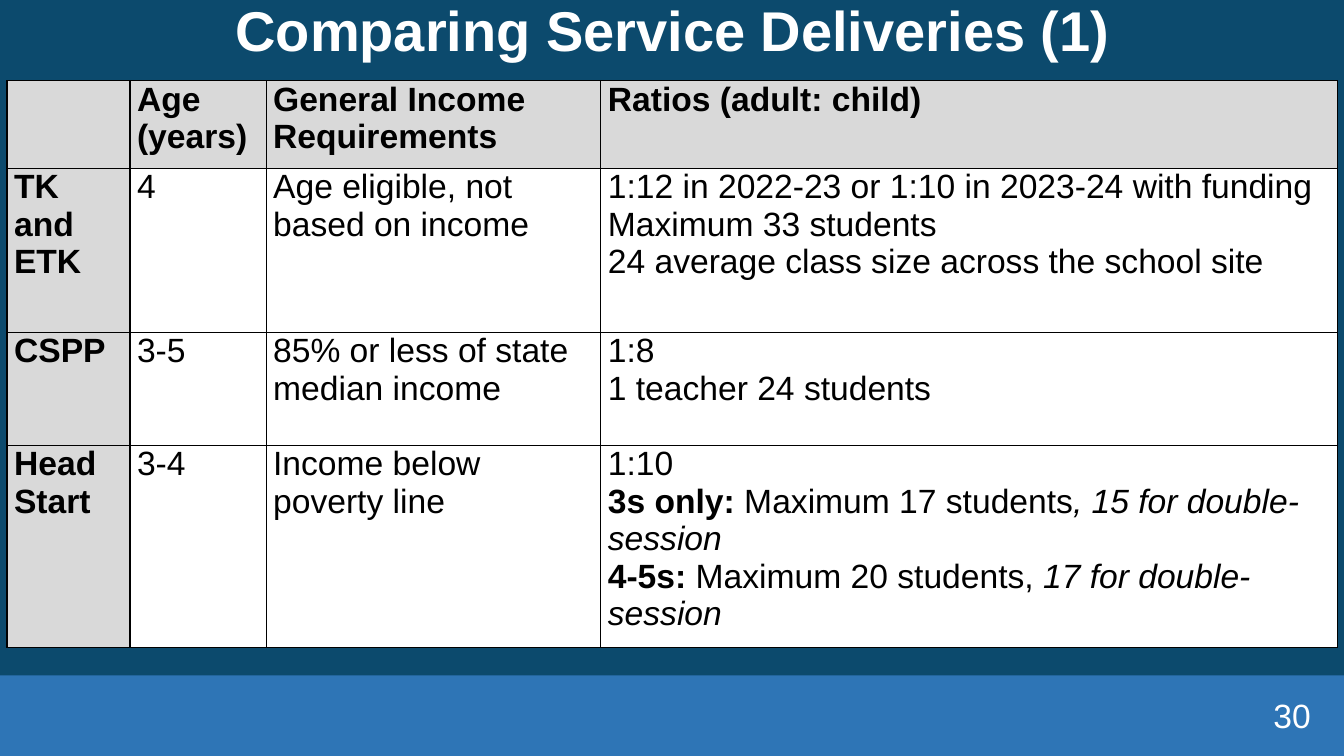
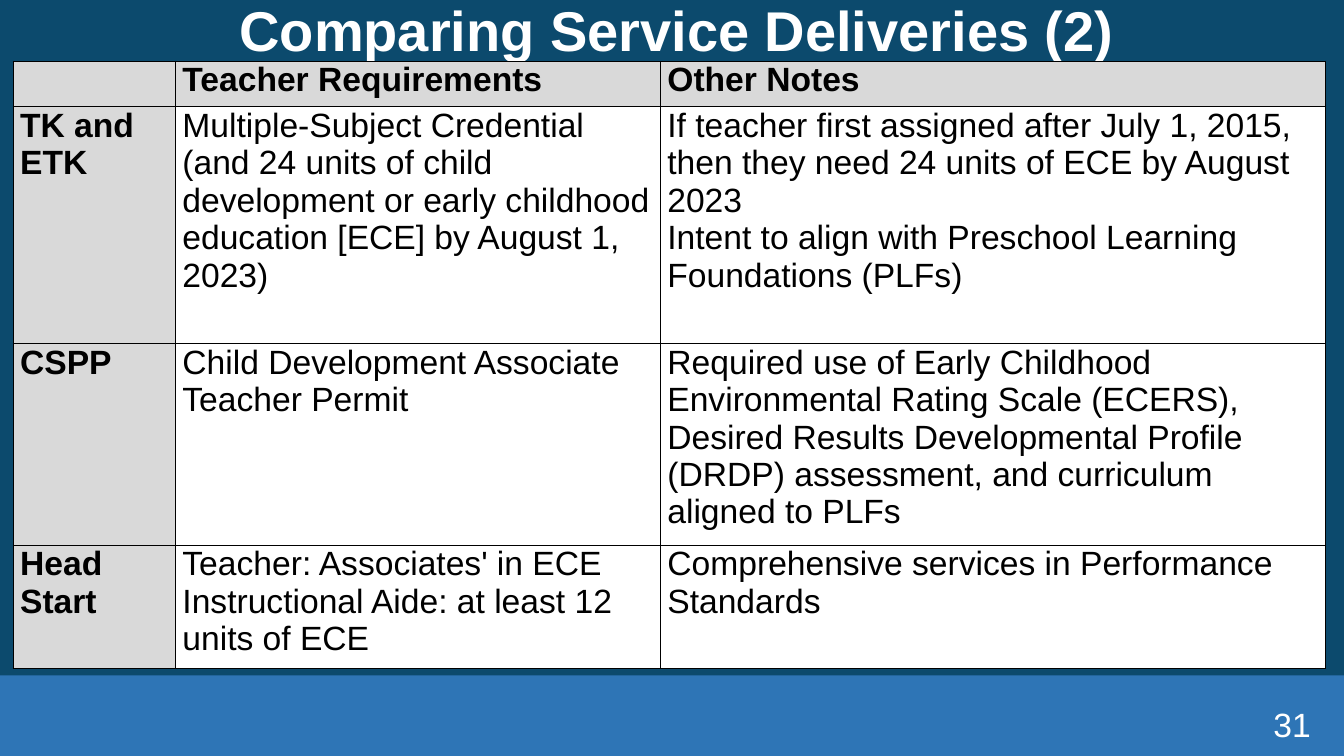
import pptx
import pptx.util
import pptx.dml.color
import pptx.enum.shapes
import pptx.enum.text
import pptx.oxml

PX = 9144
PAGE_WIDTH, PAGE_HEIGHT = 1333, 750
FONT = "Arial"
COLORS = {
    "page": "0C4A6D",
    "band": "2E75B6",
    "light": "FFFFFF",
    "header": "D9D9D9",
    "ink": "000000",
}
ALIGN = pptx.enum.text.PP_ALIGN
ANCHOR = pptx.enum.text.MSO_ANCHOR
BOLD, ITALIC = "bold", "italic"

SLIDES = [
    {
        "title": "Comparing Service Deliveries (1)",
        "title_box": (17, -29, 1300, 124),
        "number": "30",
        "number_box": (1132, 675, 168, 54),
        "table_at": (7, 80),
        "columns": [122, 135, 332, 731],
        "heights": [87, 163, 112, 186],
        "rows": [
            ["", "Age (years)", "General Income Requirements", "Ratios (adult: child)"],
            ["TK and ETK", "4", "Age eligible, not based on income", [
                "1:12 in 2022-23 or 1:10 in 2023-24 with funding",
                "Maximum 33 students",
                "24 average class size across the school site",
            ]],
            ["CSPP", "3-5", "85% or less of state median income", ["1:8", "1 teacher 24 students"]],
            ["Head Start", "3-4", "Income below poverty line", [
                "1:10",
                [("3s only: ", BOLD), ("Maximum 17 students", None), (", 15 for double-session", ITALIC)],
                [("4-5s: ", BOLD), ("Maximum 20 students, ", None), ("17 for double-session", ITALIC)],
            ]],
        ],
    },
    {
        "title": "Comparing Service Deliveries (2)",
        "title_box": (21, -29, 1300, 125),
        "number": "31",
        "number_box": (1151, 691, 149, 47),
        "table_at": (13, 61),
        "columns": [161, 481, 660],
        "heights": [45, 235, 187, 122],
        "rows": [
            ["", "Teacher Requirements", "Other Notes"],
            ["TK and ETK",
             "Multiple-Subject Credential (and 24 units of child development or early "
             "childhood education [ECE] by August 1, 2023)",
             ["If teacher first assigned after July 1, 2015, then they need 24 units of ECE by August 2023",
              "Intent to align with Preschool Learning Foundations (PLFs)"]],
            ["CSPP", "Child Development Associate Teacher Permit",
             "Required use of Early Childhood Environmental Rating Scale (ECERS), "
             "Desired Results Developmental Profile (DRDP) assessment, and curriculum aligned to PLFs"],
            ["Head Start",
             ["Teacher: Associates' in ECE", "Instructional Aide: at least 12 units of ECE"],
             "Comprehensive services in Performance Standards"],
        ],
    },
]


def px(*lengths):
    """Turn px lengths into EMU."""
    return [pptx.util.Emu(length * PX) for length in lengths]


def paint(fill, name):
    """Give a fill one solid named colour."""
    fill.solid()
    fill.fore_color.rgb = pptx.dml.color.RGBColor.from_string(COLORS[name])


def style_span(span, size, color, bold=False, italic=False):
    """Set the font of one run."""
    span.font.name = FONT
    span.font.size = pptx.util.Pt(size)
    span.font.bold = bold
    span.font.italic = italic
    span.font.color.rgb = pptx.dml.color.RGBColor.from_string(COLORS[color])


def add_band(page):
    """Draw the band along the foot of the page."""
    band = page.shapes.add_shape(
        pptx.enum.shapes.MSO_SHAPE.RECTANGLE, *px(0, PAGE_HEIGHT - 80, PAGE_WIDTH, 80))
    band.shadow.inherit = False
    paint(band.fill, "band")
    band.line.fill.background()


def add_label(page, area, text, size, align, anchor, bold=False, inset=0):
    """Place one line of light text in the given area."""
    box = page.shapes.add_textbox(*px(*area))
    frame = box.text_frame
    frame.word_wrap = True
    frame.vertical_anchor = anchor
    frame.margin_left, frame.margin_right, frame.margin_top, frame.margin_bottom = px(inset, inset, inset, inset)
    frame.text = text
    para = frame.paragraphs[0]
    para.alignment = align
    style_span(para.runs[0], size, "light", bold)
    return para


def add_borders(cell):
    """Draw a one-point line on all four sides of a cell."""
    properties = cell._tc.get_or_add_tcPr()
    for side in ("lnL", "lnR", "lnT", "lnB"):
        properties.append(pptx.oxml.parse_xml(
            f'<a:{side} xmlns:a="http://schemas.openxmlformats.org/drawingml/2006/main" w="12700">'
            f'<a:solidFill><a:srgbClr val="{COLORS["ink"]}"/></a:solidFill></a:{side}>'))


def fill_cell(cell, content, is_header):
    """Write the paragraphs of a cell and style it as header or body."""
    cell.margin_left, cell.margin_right, cell.margin_top, cell.margin_bottom = px(7, 7, 0, 0)
    add_borders(cell)
    paint(cell.fill, "header" if is_header else "light")
    frame = cell.text_frame
    for index, line in enumerate(content if isinstance(content, list) else [content]):
        para = frame.add_paragraph() if index else frame.paragraphs[0]
        for text, emphasis in line if isinstance(line, list) else [(line, None)]:
            if text:
                span = para.add_run()
                span.text = text
                style_span(span, 24, "ink", is_header or emphasis == BOLD, emphasis == ITALIC)


def add_comparison(page, corner, columns, heights, rows):
    """Build the comparison table from its top left corner."""
    table = page.shapes.add_table(
        len(rows), len(columns), *px(*corner, sum(columns), sum(heights))).table
    table.first_row = table.horz_banding = False
    for column, width in zip(table.columns, px(*columns)):
        column.width = width
    for row, height in zip(table.rows, px(*heights)):
        row.height = height
    for row_index, row in enumerate(rows):
        for column_index, content in enumerate(row):
            is_header = row_index == 0 or column_index == 0
            fill_cell(table.cell(row_index, column_index), content, is_header)


def add_comparison_page(deck, content):
    """Add one page with band, title, table and page number."""
    page = deck.slides.add_slide(deck.slide_layouts[6])
    add_band(page)
    title = add_label(page, content["title_box"], content["title"], 40,
                      ALIGN.CENTER, ANCHOR.MIDDLE, bold=True, inset=5)
    title.line_spacing = 0.9
    add_comparison(page, content["table_at"], content["columns"], content["heights"], content["rows"])
    add_label(page, content["number_box"], content["number"], 24, ALIGN.RIGHT, ANCHOR.BOTTOM)


def main():
    """Build and save the deck."""
    deck = pptx.Presentation()
    deck.slide_width, deck.slide_height = px(PAGE_WIDTH, PAGE_HEIGHT)
    paint(deck.slide_master.background.fill, "page")
    for content in SLIDES:
        add_comparison_page(deck, content)
    deck.save("out.pptx")


if __name__ == "__main__":
    main()
